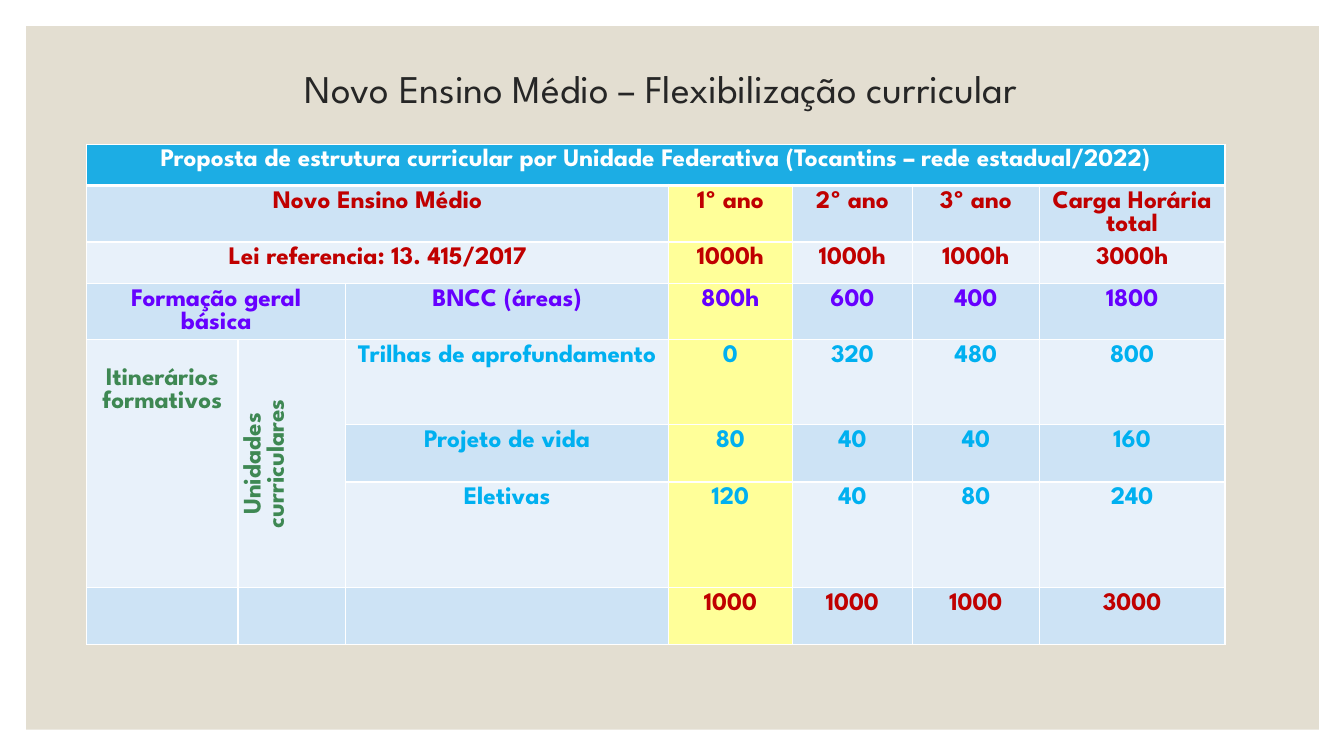
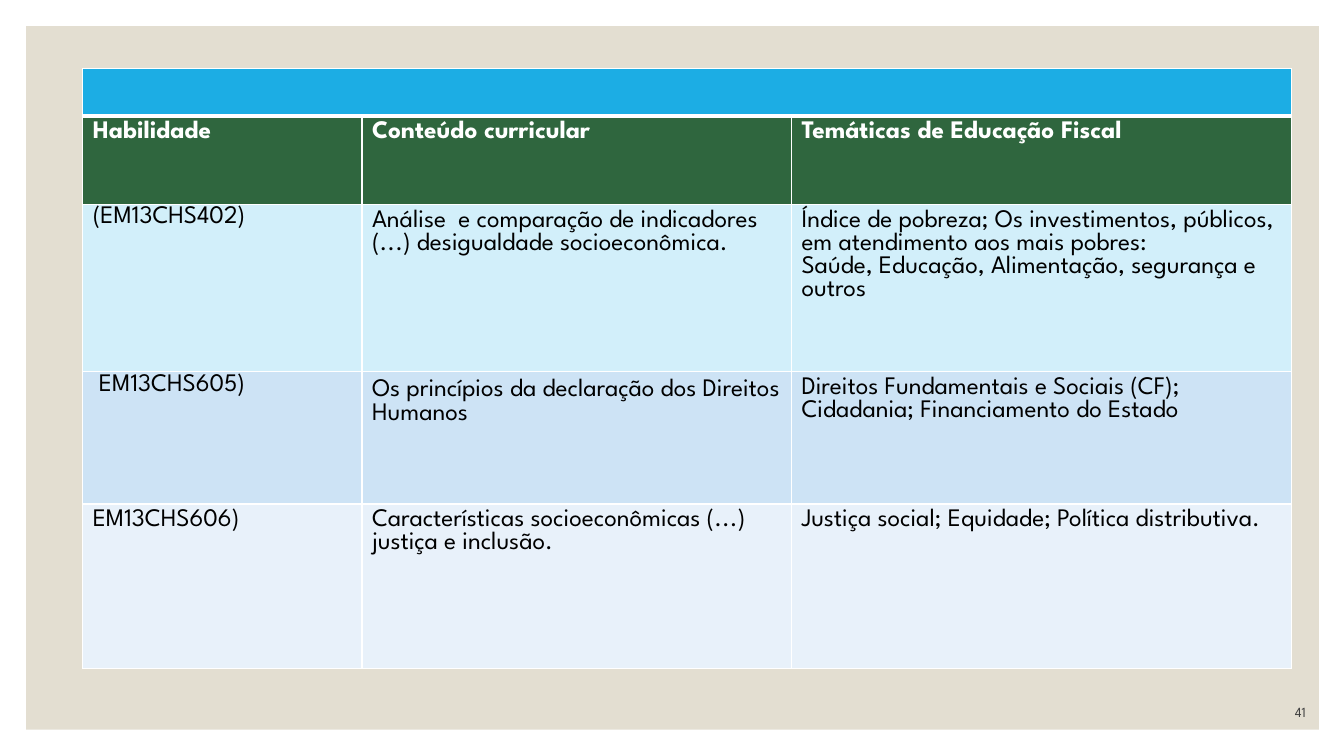
"""Builds two slides on the upper-secondary curriculum and fiscal education."""
from dataclasses import dataclass

from lxml import etree
from pptx import Presentation
from pptx.dml.color import RGBColor
from pptx.enum.shapes import MSO_SHAPE
from pptx.enum.text import MSO_ANCHOR, PP_ALIGN
from pptx.oxml.ns import qn
from pptx.slide import Slide
from pptx.table import _Cell
from pptx.text.text import TextFrame
from pptx.util import Inches, Pt

LEFT, CENTER, RIGHT = PP_ALIGN.LEFT, PP_ALIGN.CENTER, PP_ALIGN.RIGHT
MIDDLE, BOTTOM = MSO_ANCHOR.MIDDLE, MSO_ANCHOR.BOTTOM
RECTANGLE = MSO_SHAPE.RECTANGLE
TITLE_ONLY, BLANK = 5, 6


@dataclass(frozen=True)
class Theme:
    """Colours, font and type sizes shared by the slides."""

    font: str = "League Spartan"
    title_size: int = 28
    table_size: int = 18
    number_size: int = 10
    panel: str = "E3DED1"
    title: str = "262626"
    number: str = "404040"
    white: str = "FFFFFF"
    black: str = "000000"
    header: str = "1CADE4"
    band_dark: str = "CDE3F5"
    band_light: str = "E8F1FA"
    band_cyan: str = "D2EFFA"
    highlight: str = "FFFF99"
    heading: str = "2F663E"
    red: str = "C00000"
    purple: str = "6600FF"
    green: str = "3E8853"
    blue: str = "00B0F0"


THEME = Theme()


@dataclass(frozen=True)
class TextStyle:
    """Format of the text in one frame."""

    color: str
    size: int = THEME.table_size
    bold: bool = False
    align: PP_ALIGN = LEFT
    spacing: float | None = None


@dataclass(frozen=True)
class CellSpec:
    """Content, place and look of one table cell."""

    row: int
    column: int
    text: str
    fill: str
    style: TextStyle
    rows: int = 1
    columns: int = 1
    margin_top: float = 0.05
    vertical: bool = False


@dataclass(frozen=True)
class TableSpec:
    """Place, grid and cells of one table, in inches."""

    left: float
    top: float
    widths: tuple[float, ...]
    heights: tuple[float, ...]
    cells: list[CellSpec]


def write_text(frame: TextFrame, text: str, style: TextStyle) -> None:
    """Fill a frame with one paragraph per line of text."""
    frame.text = text
    font_format = {"name": THEME.font, "size": Pt(style.size), "bold": style.bold}
    for para in frame.paragraphs:
        para.alignment = style.align
        if style.spacing:
            para.line_spacing = style.spacing
        for span in para.runs:
            for name, value in font_format.items():
                setattr(span.font, name, value)
            span.font.color.rgb = RGBColor.from_string(style.color)


def place(box, left: float, top: float, width: float, height: float) -> None:
    """Move and size a shape in inches."""
    bounds = {"left": left, "top": top, "width": width, "height": height}
    for name, value in bounds.items():
        setattr(box, name, Inches(value))


def add_panel(slide: Slide) -> None:
    """Draw the beige panel behind everything else."""
    panel = slide.shapes.add_shape(RECTANGLE, 0, 0, 0, 0)
    place(panel, 0.26, 0.26, 12.82, 6.98)
    panel.shadow.inherit = False
    panel.fill.solid()
    panel.fill.fore_color.rgb = RGBColor.from_string(THEME.panel)
    panel.line.fill.background()
    slide.shapes._spTree.insert(2, panel._element)


def add_title(slide: Slide, text: str) -> None:
    """Place and format the title placeholder."""
    title = slide.shapes.title
    place(title, 0.88, 0.42, 11.35, 0.96)
    title.text_frame.vertical_anchor = MIDDLE
    style = TextStyle(THEME.title, THEME.title_size, align=CENTER, spacing=0.9)
    write_text(title.text_frame, text, style)


def add_number(slide: Slide, text: str) -> None:
    """Write the page number at the lower right."""
    box = slide.shapes.add_textbox(0, 0, 0, 0)
    place(box, 11.45, 6.9, 1.6, 0.3)
    box.text_frame.word_wrap = True
    box.text_frame.vertical_anchor = BOTTOM
    style = TextStyle(THEME.number, THEME.number_size, align=RIGHT)
    write_text(box.text_frame, text, style)


def set_borders(cell: _Cell, row: int) -> None:
    """Draw white cell borders, with a thick one under the header."""
    properties = cell._tc.get_or_add_tcPr()
    widths = {"lnL": 1, "lnR": 1, "lnT": 3 if row == 1 else 1, "lnB": 1 if row else 3}
    for tag, width in widths.items():
        line = etree.SubElement(properties, qn(f"a:{tag}"), w=str(Pt(width)))
        fill = etree.SubElement(line, qn("a:solidFill"))
        etree.SubElement(fill, qn("a:srgbClr"), val=THEME.white)


def add_table(slide: Slide, spec: TableSpec) -> None:
    """Draw a table from its specification."""
    table = slide.shapes.add_table(
        len(spec.heights), len(spec.widths), Inches(spec.left), Inches(spec.top),
        Inches(sum(spec.widths)), Inches(sum(spec.heights))).table
    for column, width in zip(table.columns, spec.widths):
        column.width = Inches(width)
    for index, (row, height) in enumerate(zip(table.rows, spec.heights)):
        row.height = Inches(height)
        for cell in row.cells:
            set_borders(cell, index)
    for item in spec.cells:
        cell = table.cell(item.row, item.column)
        if item.rows * item.columns > 1:
            cell.merge(table.cell(item.row + item.rows - 1,
                                  item.column + item.columns - 1))
        cell.fill.solid()
        cell.fill.fore_color.rgb = RGBColor.from_string(item.fill)
        cell.margin_top = Inches(item.margin_top)
        if item.vertical:
            cell._tc.get_or_add_tcPr().set("vert", "vert270")
        write_text(cell.text_frame, item.text, item.style)


def curriculum_cells() -> list[CellSpec]:
    """Lay out the hours of each curriculum part by year."""
    def centered(color: str) -> TextStyle:
        return TextStyle(color, bold=True, align=CENTER)

    labels = [
        (1, 0, 3, "Novo Ensino Médio", THEME.red),
        (2, 0, 3, "Lei referencia: 13. 415/2017", THEME.red),
        (3, 0, 2, "Formação geral básica", THEME.purple),
        (3, 2, 1, "BNCC (áreas)", THEME.purple),
        (4, 2, 1, "Trilhas de aprofundamento", THEME.blue),
        (5, 2, 1, "Projeto de vida", THEME.blue),
        (6, 2, 1, "Eletivas", THEME.blue),
        *((7, column, 1, "", THEME.red) for column in range(3)),
    ]
    hours = [
        (THEME.red, ("1º ano", "2º ano", "3º ano", "Carga Horária total")),
        (THEME.red, ("1000h", "1000h", "1000h", "3000h")),
        (THEME.purple, ("800h", "600", "400", "1800")),
        (THEME.blue, ("0", "320", "480", "800")),
        (THEME.blue, ("80", "40", "40", "160")),
        (THEME.blue, ("120", "40", "80", "240")),
        (THEME.red, ("1000", "1000", "1000", "3000")),
    ]
    bands = (THEME.band_light, THEME.band_dark)
    heading = "Proposta de estrutura curricular por Unidade Federativa (Tocantins – rede estadual/2022)"
    cells = [
        CellSpec(0, 0, heading, THEME.header, centered(THEME.white), columns=7),
        CellSpec(4, 0, "Itinerários formativos", THEME.band_light,
                 centered(THEME.green), rows=3, margin_top=0.28),
        CellSpec(4, 1, "Unidades curriculares", THEME.band_light,
                 centered(THEME.green), rows=3, vertical=True),
    ]
    for row, column, columns, text, color in labels:
        cells.append(CellSpec(row, column, text, bands[row % 2], centered(color),
                              columns=columns))
    for row, (color, values) in enumerate(hours, start=1):
        for column, text in enumerate(values, start=3):
            fill = THEME.highlight if column == 3 else bands[row % 2]
            cells.append(CellSpec(row, column, text, fill, centered(color)))
    return cells


def skill_cells() -> list[CellSpec]:
    """Lay out the skills with their contents and fiscal themes."""
    heading = TextStyle(THEME.white, bold=True)
    body = TextStyle(THEME.black)
    loose = TextStyle(THEME.black, spacing=1.07)
    rows = [
        (THEME.heading, (heading,) * 3, 0.05,
         ("Habilidade", "Conteúdo curricular", "Temáticas de Educação Fiscal")),
        (THEME.band_cyan, (loose, body, body), 0,
         ("(EM13CHS402)",
          "Análise  e comparação de indicadores (...) desigualdade socioeconômica.",
          "Índice de pobreza; Os investimentos, públicos, em atendimento aos mais pobres:\n"
          "Saúde, Educação, Alimentação, segurança e outros")),
        (THEME.band_dark, (loose, loose, body), 0,
         (" EM13CHS605)",
          "Os princípios da declaração dos Direitos Humanos",
          "Direitos Fundamentais e Sociais (CF); Cidadania; Financiamento do Estado")),
        (THEME.band_light, (body,) * 3, 0.05,
         ("EM13CHS606)",
          "Características socioeconômicas (...) justiça e inclusão.",
          "Justiça social; Equidade; Política distributiva.")),
    ]
    cells = [CellSpec(0, 0, "", THEME.header, heading, columns=3)]
    for row, (fill, styles, first_margin, texts) in enumerate(rows, start=1):
        for column, (style, text) in enumerate(zip(styles, texts)):
            margin = 0.05 if column else first_margin
            cells.append(CellSpec(row, column, text, fill, style, margin_top=margin))
    return cells


def main() -> None:
    """Build and save the deck."""
    deck = Presentation()
    deck.slide_width, deck.slide_height = Inches(13.33), Inches(7.5)

    curriculum = deck.slides.add_slide(deck.slide_layouts[TITLE_ONLY])
    add_panel(curriculum)
    add_title(curriculum, "Novo Ensino Médio – Flexibilização curricular")
    add_table(curriculum, TableSpec(
        0.86, 1.43, (1.5, 1.07, 3.2, 1.23, 1.19, 1.26, 1.84),
        (0.41, 0.56, 0.41, 0.56, 0.84, 0.57, 1.05, 0.56), curriculum_cells()))

    skills = deck.slides.add_slide(deck.slide_layouts[BLANK])
    add_panel(skills)
    add_number(skills, "41")
    add_table(skills, TableSpec(
        0.82, 0.68, (2.77, 4.26, 4.96), (0.47, 0.88, 1.66, 1.31, 1.63), skill_cells()))

    deck.save("out.pptx")


if __name__ == "__main__":
    main()
